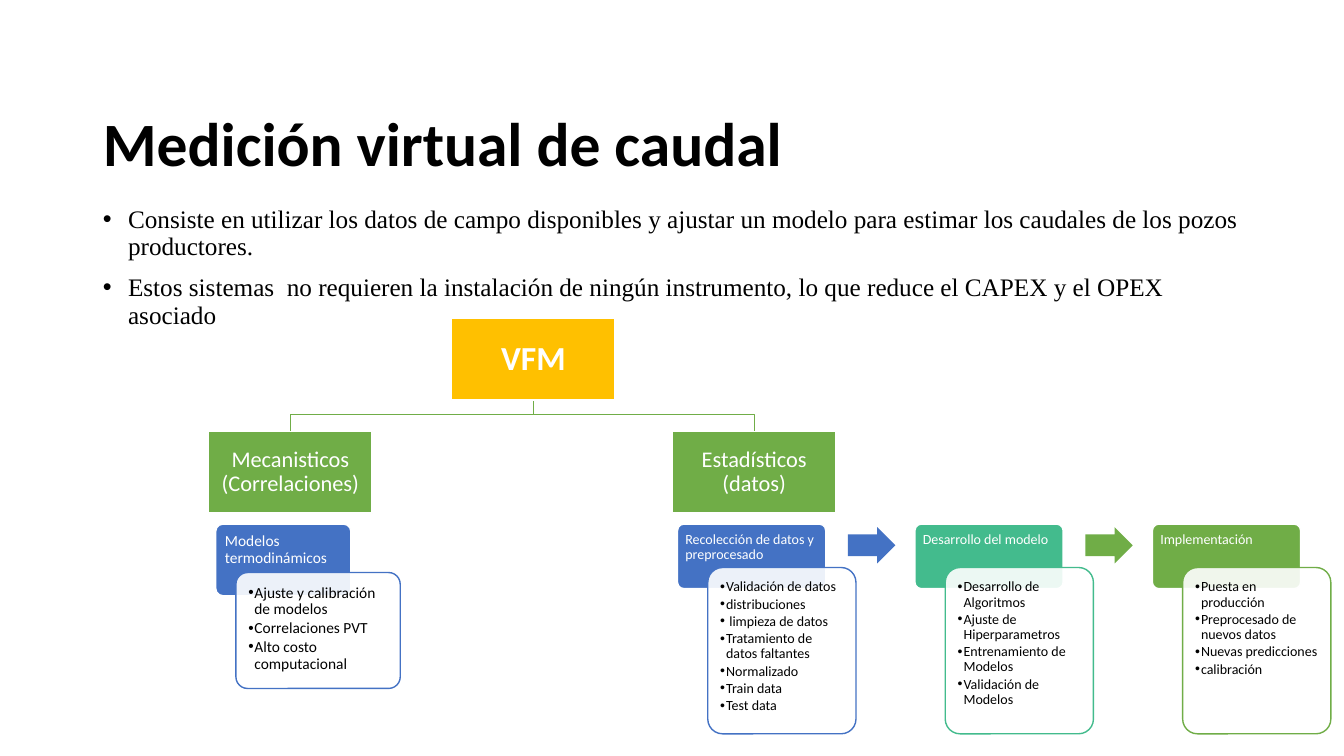
import pptx
import pptx.dml.color
import pptx.enum.shapes
import pptx.enum.text
import pptx.oxml
import pptx.oxml.ns
import pptx.util
from pptx.util import Inches

SHAPE = pptx.enum.shapes.MSO_SHAPE
ALIGN = pptx.enum.text.PP_ALIGN
ANCHOR = pptx.enum.text.MSO_ANCHOR
WHITE, BLACK = "FFFFFF", "000000"
GOLD, GREEN, BLUE, TEAL = "FFC000", "70AD47", "4472C4", "43BB8D"

POINTS = [
    "Consiste en utilizar los datos de campo disponibles y ajustar un modelo para estimar los caudales de los pozos productores.",
    "Estos sistemas  no requieren la instalación de ningún instrumento, lo que reduce el CAPEX y el OPEX asociado",
]
MECHANISTIC = (
    "Modelos termodinámicos", BLUE,
    ["Ajuste y calibración de modelos", "Correlaciones PVT", "Alto costo computacional"],
)
STATISTICAL = [
    ("Recolección de datos y preprocesado", BLUE,
     ["Validación de datos", "distribuciones", " limpieza de datos",
      "Tratamiento de datos faltantes", "Normalizado", "Train data", "Test data"]),
    ("Desarrollo del modelo", TEAL,
     ["Desarrollo de Algoritmos", "Ajuste de Hiperparametros",
      "Entrenamiento de Modelos", "Validación de Modelos"]),
    ("Implementación", GREEN,
     ["Puesta en producción", "Preprocesado de nuevos datos",
      "Nuevas predicciones", "calibración"]),
]


def apply(target, values):
    for name, value in values.items():
        setattr(target, name, value)


def rgb(color):
    return pptx.dml.color.RGBColor.from_string(color)


def place(element, left, top, width, height):
    apply(element, {"left": Inches(left), "top": Inches(top),
                    "width": Inches(width), "height": Inches(height)})


def add_bullet(paragraph, indent):
    properties = paragraph._p.get_or_add_pPr()
    properties.set("marL", str(Inches(indent)))
    properties.set("indent", str(-Inches(indent)))
    namespace = pptx.oxml.ns.nsdecls("a")
    properties.append(pptx.oxml.parse_xml(f'<a:buFont {namespace} typeface="Arial"/>'))
    properties.append(pptx.oxml.parse_xml(f'<a:buChar {namespace} char="•"/>'))


def write(frame, lines, size, color, font="Calibri", bold=False, align=ALIGN.LEFT,
          anchor=ANCHOR.TOP, inset=None, indent=0, before=0, after=0):
    apply(frame, {"word_wrap": True, "auto_size": pptx.enum.text.MSO_AUTO_SIZE.NONE,
                  "vertical_anchor": anchor})
    if inset is not None:
        sides = ("margin_left", "margin_top", "margin_right", "margin_bottom")
        apply(frame, dict.fromkeys(sides, Inches(inset)))
    for index, line in enumerate(lines):
        paragraph = frame.add_paragraph() if index else frame.paragraphs[0]
        paragraph.text = line
        apply(paragraph, {"alignment": align, "line_spacing": 0.9,
                          "space_before": pptx.util.Pt(before if index else 0),
                          "space_after": pptx.util.Pt(after)})
        if indent:
            add_bullet(paragraph, indent)
        apply(paragraph.font, {"name": font, "size": pptx.util.Pt(size), "bold": bold})
        paragraph.font.color.rgb = rgb(color)


def add_block(slide, preset, box, fill, outline=None, adjustments=(), alpha=100):
    block = slide.shapes.add_shape(preset, *map(Inches, box))
    block.shadow.inherit = False
    block.fill.solid()
    block.fill.fore_color.rgb = rgb(fill)
    if alpha < 100:
        tint = block.fill._xPr.find(".//" + pptx.oxml.ns.qn("a:srgbClr"))
        namespace = pptx.oxml.ns.nsdecls("a")
        tint.append(pptx.oxml.parse_xml(f'<a:alpha {namespace} val="{alpha * 1000}"/>'))
    if outline:
        block.line.color.rgb = rgb(outline)
        block.line.width = pptx.util.Pt(1)
    else:
        block.line.fill.background()
    for index, value in enumerate(adjustments):
        block.adjustments[index] = value
    return block


def add_node(slide, left, top, label, fill, size, bold=False):
    node = add_block(slide, SHAPE.RECTANGLE, (left, top, 1.62, 0.81), fill, WHITE)
    write(node.text_frame, [label], size, WHITE, bold=bold, align=ALIGN.CENTER,
          anchor=ANCHOR.MIDDLE, inset=0.01)


def add_branch(slide, start, end):
    (x1, y1), (x2, y2) = start, end
    bend = 4.11
    builder = slide.shapes.build_freeform(Inches(x1), Inches(y1))
    corners = [(x1, bend), (x2, bend), (x2, y2)]
    builder.add_line_segments([(Inches(x), Inches(y)) for x, y in corners], close=False)
    branch = builder.convert_to_shape()
    branch.shadow.inherit = False
    branch.fill.background()
    branch.line.color.rgb = rgb(GREEN)
    branch.line.width = pptx.util.Pt(1)


def add_stage(slide, stage, header_box, card_box, size, inset):
    heading, color, tasks = stage
    header = add_block(slide, SHAPE.ROUNDED_RECTANGLE, header_box, color, WHITE, [0.1])
    write(header.text_frame, [heading], size, WHITE, inset=inset - 0.02)
    card = add_block(slide, SHAPE.ROUNDED_RECTANGLE, card_box, WHITE, color, [0.1], alpha=90)
    write(card.text_frame, tasks, size, BLACK, inset=inset, indent=0.06, after=1.5)


def main():
    deck = pptx.Presentation()
    apply(deck, {"slide_width": Inches(13.33), "slide_height": Inches(7.5)})
    slide = deck.slides.add_slide(deck.slide_layouts[1])

    title, body = slide.placeholders
    place(title, 0.92, 1.07, 11.5, 0.77)
    write(title.text_frame, ["Medición virtual de caudal"], 44, BLACK, bold=True,
          anchor=ANCHOR.MIDDLE)
    place(body, 0.92, 2, 11.5, 4.76)
    write(body.text_frame, POINTS, 18, BLACK, font="Times New Roman", indent=0.25, before=10)

    methods = [(2.07, "Mecanisticos (Correlaciones)"), (6.67, "Estadísticos (datos)")]
    for left, _ in methods:
        add_branch(slide, (5.29, 3.98), (left + 0.81, 4.28))
    add_node(slide, 4.48, 3.16, "VFM", GOLD, 24, bold=True)
    for left, label in methods:
        add_node(slide, left, 4.28, label, GREEN, 16)

    add_stage(slide, MECHANISTIC, (2.14, 5.2, 1.34, 0.71), (2.34, 5.68, 1.63, 1.15), 11, 0.09)
    arrow_colors = [BLUE, GREEN]
    for index, stage in enumerate(STATISTICAL):
        left = 6.72 + 2.355 * index
        add_stage(slide, stage, (left, 5.2, 1.47, 0.64), (left + 0.3, 5.63, 1.47, 1.65), 10, 0.08)
        if index < len(arrow_colors):
            add_block(slide, SHAPE.RIGHT_ARROW, (left + 1.69, 5.23, 0.47, 0.36),
                      arrow_colors[index], adjustments=[0.6, 0.5])

    deck.save("out.pptx")


if __name__ == "__main__":
    main()
